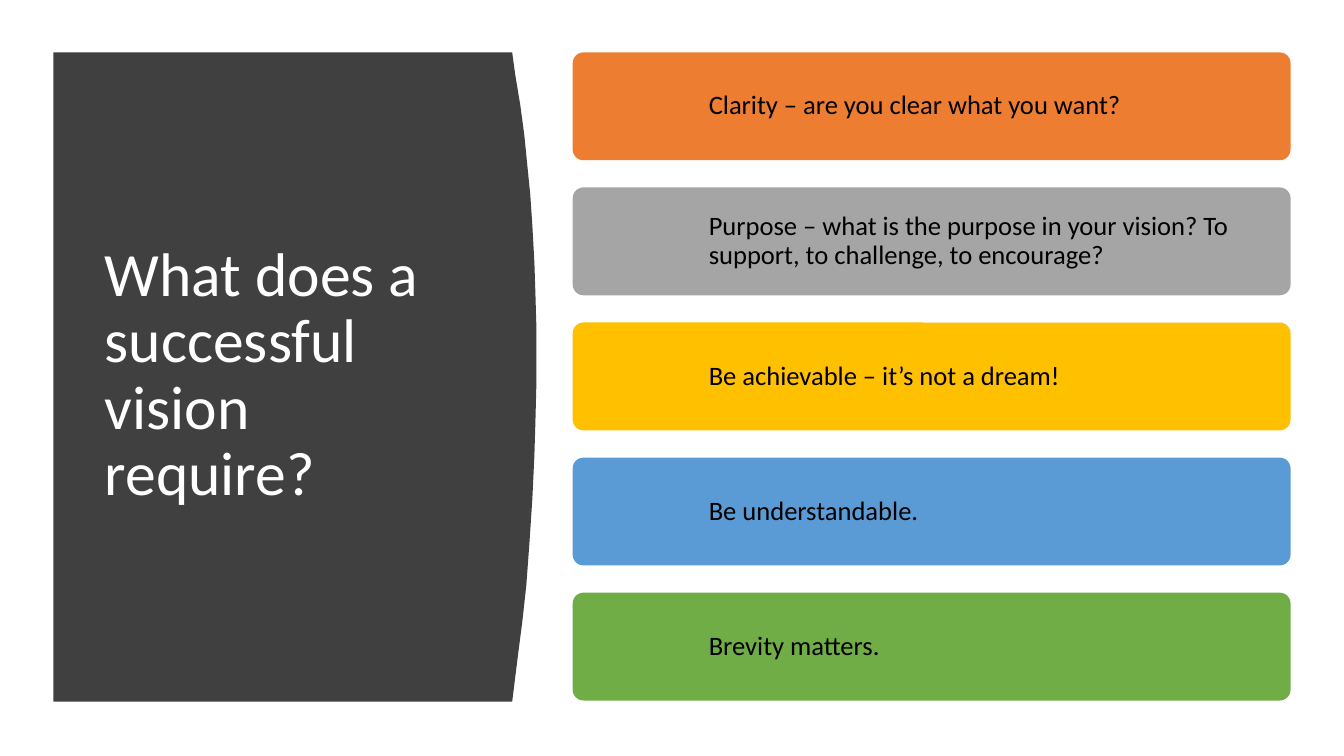
from pptx import Presentation
from pptx.dml.color import RGBColor as RGB
from pptx.enum.shapes import MSO_SHAPE as SHAPE
from pptx.enum.text import MSO_ANCHOR as ANCHOR, PP_ALIGN as ALIGN
from pptx.util import Inches, Pt

COLORS = {
    "panel": "404040", "title": "FFFFFF", "text": "000000",
    "orange": "ED7D31", "gray": "A5A5A5", "gold": "FFC000",
    "blue": "5B9BD5", "green": "70AD47",
}
POINTS = [
    ("orange", "Clarity – are you clear what you want?"),
    ("gray", "Purpose – what is the purpose in your vision? "
             "To support, to challenge, to encourage?"),
    ("gold", "Be achievable – it’s not a dream!"),
    ("blue", "Be understandable."),
    ("green", "Brevity matters."),
]
CURVE = [
    (5.08, 0.52), (5.11, 0.74), (5.16, 1.04), (5.2, 1.34), (5.23, 1.64),
    (5.26, 1.94), (5.28, 2.24), (5.3, 2.6), (5.31, 2.9), (5.32, 3.25),
    (5.32, 3.8), (5.31, 4.2), (5.3, 4.52), (5.28, 4.95), (5.25, 5.4),
    (5.22, 5.81), (5.18, 6.17), (5.14, 6.48), (5.11, 6.72), (5.08, 6.96),
]


def paint(shape, color):
    shape.fill.solid()
    shape.fill.fore_color.rgb = RGB.from_string(COLORS[color])
    shape.line.fill.background()
    shape.shadow.inherit = False


def write(shape, text, size, color):
    frame = shape.text_frame
    frame.text = text
    frame.word_wrap = True
    frame.vertical_anchor = ANCHOR.MIDDLE
    para = frame.paragraphs[0]
    para.alignment = ALIGN.LEFT
    para.line_spacing = 0.9
    font = para.runs[0].font
    font.name = "Calibri"
    font.size = Pt(size)
    font.color.rgb = RGB.from_string(COLORS[color])


deck = Presentation()
deck.slide_width, deck.slide_height = Inches(13.33), Inches(7.5)
slide = deck.slides.add_slide(deck.slide_layouts[5])
shapes = slide.shapes

# Curved panel, placed behind the title
title = shapes.title
outline = shapes.build_freeform(Inches(0.53), Inches(0.52))
outline.add_line_segments(
    [(Inches(x), Inches(y)) for x, y in CURVE + [(0.53, 6.96)]], close=True)
panel = outline.convert_to_shape()
paint(panel, "panel")
title.element.addprevious(panel.element)

title.left, title.top = Inches(0.94), Inches(1.11)
title.width, title.height = Inches(3.74), Inches(5.24)
write(title, "What does a successful vision require?", 44, "title")

# One bar with its label per requirement
HEIGHT, STEP = 1.07, 1.34
for row, (color, text) in enumerate(POINTS):
    top = Inches(0.52 + row * STEP)
    bar = shapes.add_shape(SHAPE.ROUNDED_RECTANGLE, Inches(5.68), top,
                           Inches(7.12), Inches(HEIGHT))
    bar.adjustments[0] = 0.1
    paint(bar, color)
    label = shapes.add_textbox(Inches(6.92), top, Inches(5.89), Inches(HEIGHT))
    write(label, text, 19, "text")
    frame = label.text_frame
    frame.margin_left = frame.margin_right = Inches(0.11)
    frame.margin_top = frame.margin_bottom = Inches(0.11)

deck.save("out.pptx")
